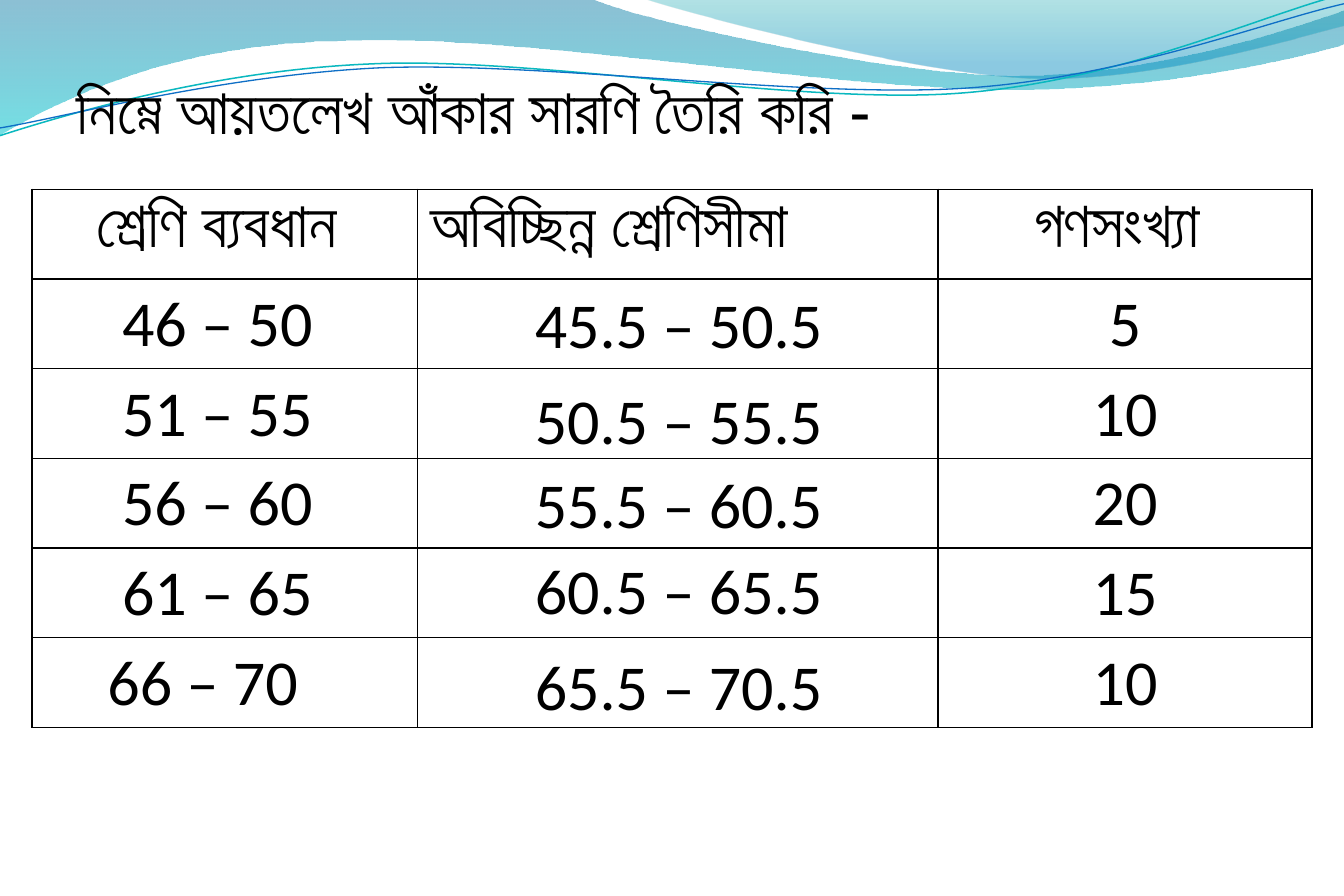
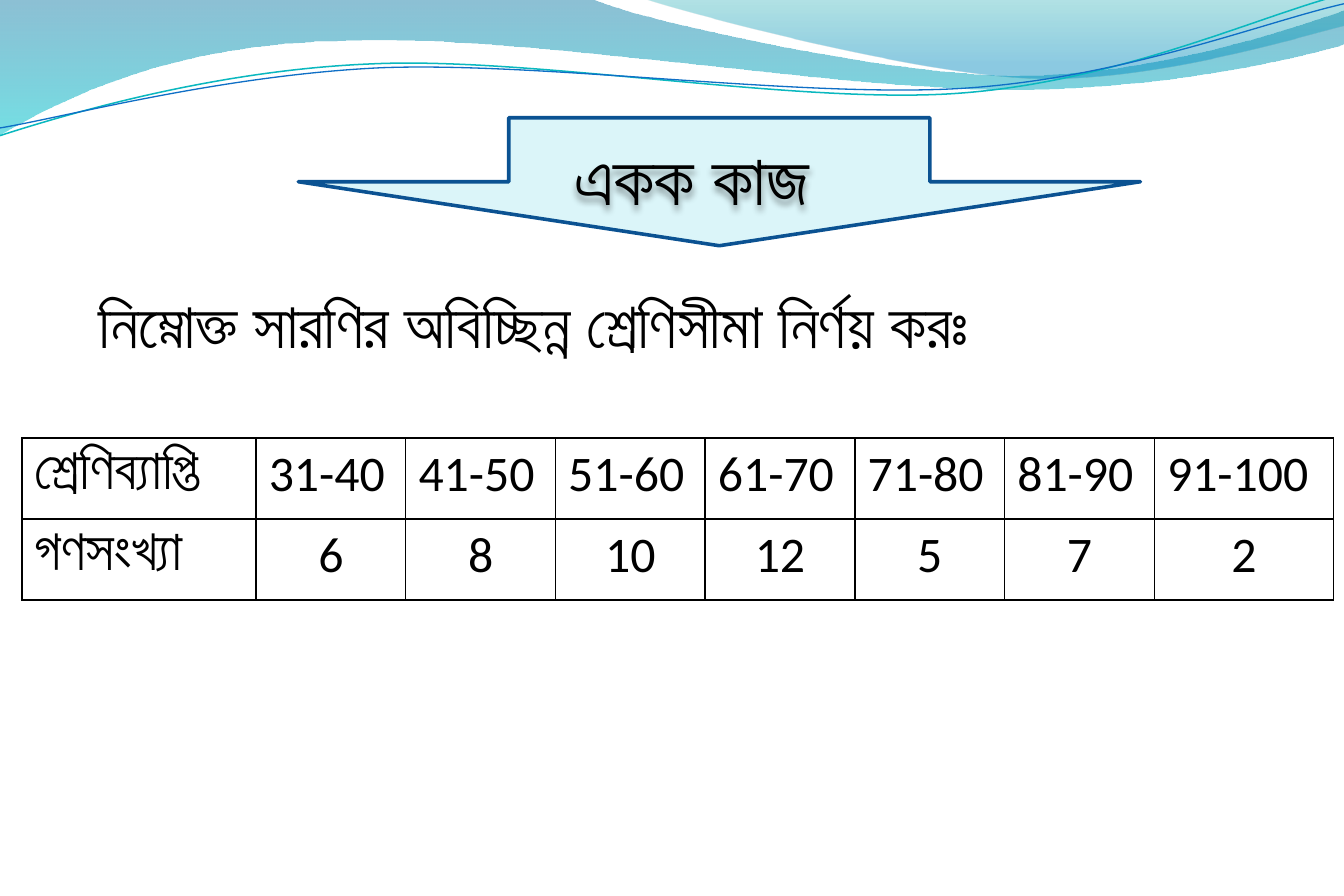
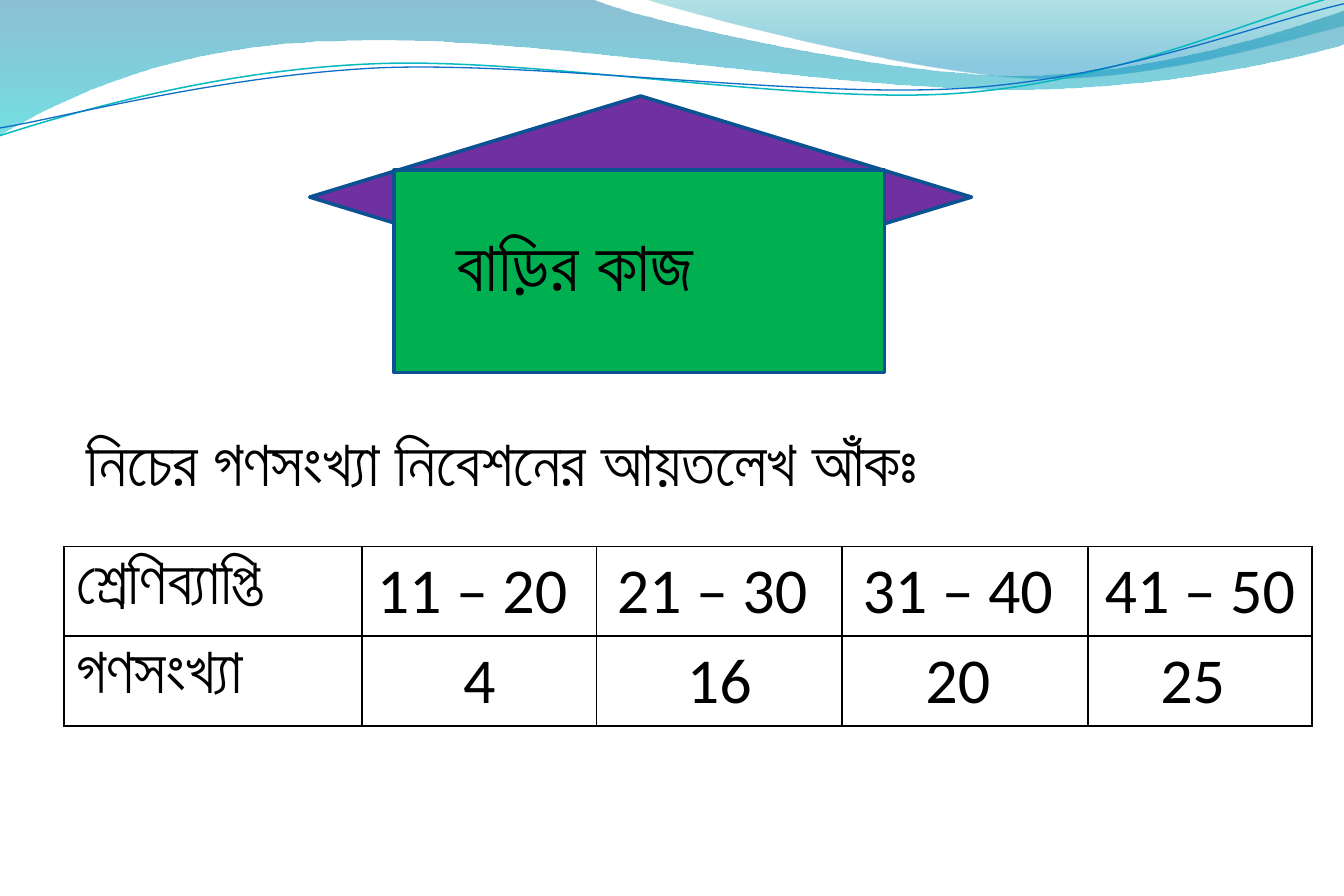
from dataclasses import dataclass
from typing import NamedTuple

from lxml import etree
from pptx import Presentation
from pptx.dml.color import RGBColor
from pptx.enum.shapes import MSO_SHAPE
from pptx.enum.text import MSO_AUTO_SIZE, PP_ALIGN
from pptx.oxml import parse_xml
from pptx.oxml.ns import nsdecls, qn
from pptx.util import Inches, Pt

CENTER, LEFT = PP_ALIGN.CENTER, PP_ALIGN.LEFT
FIT_TEXT = MSO_AUTO_SIZE.SHAPE_TO_FIT_TEXT
DOWN_ARROW, DIAMOND, RECTANGLE = MSO_SHAPE.DOWN_ARROW, MSO_SHAPE.DIAMOND, MSO_SHAPE.RECTANGLE
# Bengali base letters that join a following nukta into one code point
NUKTA = chr(0x09BC)
DOTTED_LETTERS = {0x09A1: 0x09DC, 0x09AF: 0x09DF}

Point = tuple[float, float]


@dataclass(frozen=True)
class Theme:
    label_font: str = "Arial"
    number_font: str = "Calibri"
    text: str = "000000"
    outline: str = "0B5292"
    arrow: str = "DBF5F9"
    roof: str = "7030A0"
    wall: str = "00B050"
    banner_size: int = 40
    body_size: int = 36
    label_size: int = 32
    small_size: int = 28


THEME = Theme()


class Stop(NamedTuple):
    position: float
    color: str
    opacity: int


class Wave(NamedTuple):
    """A path: a start, then pieces of one point (line) or three points (curve)."""
    start: Point
    pieces: list[tuple[Point, ...]]
    stops: tuple[Stop, ...] = ()
    line: str = ""
    weight: float = 0


@dataclass(frozen=True)
class Grid:
    left: float
    top: float
    widths: list[float]
    row_height: float
    rows: list[list[str]]
    left_cells: frozenset[tuple[int, int]]
    label_size: int = THEME.body_size
    number_size: int = THEME.body_size


WAVES = [
    Wave((0, 0), [
        ((4.62, -0.01),),
        ((4.99, 0.16), (6.97, 0.59), (7.96, 0.59)),
        ((8.96, 0.59), (10.06, 0.24), (10.5, 0.08)),
        ((10.51, 0.34),),
        ((10.32, 0.41), (9.13, 0.71), (7.83, 0.7)),
        ((6.53, 0.7), (4.01, 0.26), (2.7, 0.32)),
        ((1.36, 0.33), (0.48, 0.77), (-0.01, 1.06)),
        ((0, 0),),
    ], stops=(Stop(0, "0074A1", 45), Stop(1, "00C6CF", 55))),
    Wave((5.03, -0.01), [
        ((5.35, 0.1), (7.16, 0.58), (8.07, 0.61)),
        ((8.98, 0.64), (10.1, 0.3), (10.5, 0.2)),
        ((10.5, 0),),
        ((5.03, -0.01),),
    ], stops=(Stop(0, "00A1A9", 30), Stop(0.8, "008BBF", 45))),
    Wave((0, 1.06), [
        ((0.5, 0.9), (1.66, 0.55), (2.9, 0.5)),
        ((4.15, 0.44), (6.22, 0.82), (7.48, 0.73)),
        ((8.74, 0.64), (9.85, 0.12), (10.48, -0.04)),
    ], line="0AB8BF", weight=0.85),
    Wave((0, 1), [
        ((0.49, 0.92), (1.72, 0.59), (2.97, 0.53)),
        ((4.23, 0.48), (6.27, 0.77), (7.53, 0.69)),
        ((8.78, 0.61), (9.88, 0.17), (10.5, 0.03)),
    ], line="0F6FC6", weight=0.75),
]

FREQUENCY_GRID = Grid(
    0.25, 1.48, [3.01, 4.07, 2.92], 0.7,
    [["শ্রেণি ব্যবধান ", "অবিচ্ছিন্ন শ্রেণিসীমা", "গণসংখ্যা "],
     ["46 – 50 ", "", "5"],
     ["51 – 55 ", "", "10"],
     ["56 – 60 ", "", "20"],
     ["61 – 65 ", "", "15"],
     ["66 – 70 ", "", "10"]],
    frozenset({(0, 1)}))
CLASS_LIMITS = [(2.17, 2.58, "45.5 – 50.5"), (2.92, 2.58, "50.5 – 55.5"),
                (3.58, 2.67, "55.5 – 60.5"), (4.25, 2.75, "60.5 – 65.5"),
                (5, 2.83, "65.5 – 70.5")]

CLASSWORK_GRID = Grid(
    0.17, 3.42, [1.83] + [1.17] * 6 + [1.4], 0.63,
    [["শ্রেণিব্যাপ্তি", "31-40", "41-50", "51-60", "61-70", "71-80", "81-90", "91-100"],
     ["গণসংখ্যা", "6", "8", "10", "12", "5", "7", "2"]],
    frozenset({(0, col) for col in range(8)} | {(1, 0)}),
    THEME.label_size, THEME.small_size)

HOMEWORK_GRID = Grid(
    0.5, 4.27, [2.33, 1.83, 1.92, 1.92, 1.75], 0.7,
    [["শ্রেণিব্যাপ্তি", "11 – 20 ", "21 – 30 ", "31 – 40 ", "41 – 50 "],
     ["গণসংখ্যা", "4", "16", "20 ", "25 "]],
    frozenset({(0, 0), (1, 0)}))


def rgb(color: str) -> RGBColor:
    return RGBColor.from_string(color)


def join_nukta(text: str) -> str:
    for base, dotted in DOTTED_LETTERS.items():
        text = text.replace(chr(base) + NUKTA, chr(dotted))
    return text


def fill_gradient(sp, stops: tuple[Stop, ...]) -> None:
    """Fill from top to bottom with partly transparent colours."""
    sp.fill.gradient()
    sp.fill.gradient_angle = 270
    for target, stop in zip(sp.fill.gradient_stops, stops):
        target.position = stop.position
        target.color.rgb = rgb(stop.color)
    for node, stop in zip(sp.element.spPr.iter(qn("a:srgbClr")), stops):
        etree.SubElement(node, qn("a:alpha"), val=str(stop.opacity * 1000))


def bend_segments(sp, pieces: list[tuple[Point, ...]]) -> None:
    """Turn the straight segments that have control points into Bézier curves."""
    segments = list(sp.element.spPr.iter(qn("a:lnTo")))
    for segment, piece in zip(segments, pieces):
        if len(piece) == 1:
            continue
        segment.tag = qn("a:cubicBezTo")
        for index, (x, y) in enumerate(piece[:-1]):
            control = etree.Element(qn("a:pt"), x=str(Inches(x) - sp.left),
                                    y=str(Inches(y) - sp.top))
            segment.insert(index, control)


def add_wave(slide, wave: Wave):
    ends = [(Inches(x), Inches(y)) for x, y in (piece[-1] for piece in wave.pieces)]
    builder = slide.shapes.build_freeform(Inches(wave.start[0]), Inches(wave.start[1]))
    builder.add_line_segments(ends, close=bool(wave.stops))
    sp = builder.convert_to_shape()
    bend_segments(sp, wave.pieces)
    sp.shadow.inherit = False
    if wave.stops:
        fill_gradient(sp, wave.stops)
        sp.line.fill.background()
    else:
        sp.fill.background()
        sp.line.color.rgb = rgb(wave.line)
        sp.line.width = Pt(wave.weight)
    return sp


def move_waves_to_layout(slide) -> None:
    """Draw the waves, then hand them to the layout so that every slide shows them."""
    for wave in WAVES:
        slide.slide_layout.shapes.element.append(add_wave(slide, wave).element)


def add_run(p, text: str, size: int, font: str) -> None:
    r = p.add_run()
    r.text = join_nukta(text)
    r.font.size = Pt(size)
    r.font.name = font
    r.font.color.rgb = rgb(THEME.text)


def add_text(slide, left: float, top: float, width: float, text: str,
             size: int = THEME.body_size, font: str = THEME.label_font):
    height = 0.77 if size == THEME.banner_size else 0.71
    box = slide.shapes.add_textbox(Inches(left), Inches(top), Inches(width), Inches(height))
    tf = box.text_frame
    tf.word_wrap = True
    tf.auto_size = FIT_TEXT
    add_run(tf.paragraphs[0], text, size, font)
    return box


def add_soft_shadow(sp) -> None:
    sp.element.spPr.append(parse_xml(
        f'<a:effectLst {nsdecls("a")}><a:outerShdw blurRad="50800" dist="38100" dir="5400000">'
        '<a:srgbClr val="000000"><a:alpha val="40000"/></a:srgbClr>'
        '</a:outerShdw></a:effectLst>'))


def add_block(shapes, kind, left: float, top: float, width: float, height: float,
              fill: str) -> None:
    sp = shapes.add_shape(kind, Inches(left), Inches(top), Inches(width), Inches(height))
    sp.shadow.inherit = False
    sp.fill.solid()
    sp.fill.fore_color.rgb = rgb(fill)
    sp.line.color.rgb = rgb(THEME.outline)
    sp.line.width = Pt(2)


def add_borders(cell) -> None:
    tc_pr = cell._tc.get_or_add_tcPr()
    for index, side in enumerate(("lnL", "lnR", "lnT", "lnB")):
        tc_pr.insert(index, parse_xml(
            f'<a:{side} {nsdecls("a")} w="{Pt(1)}"><a:solidFill>'
            f'<a:srgbClr val="{THEME.text}"/></a:solidFill></a:{side}>'))


def add_grid(slide, grid: Grid):
    count = len(grid.rows)
    table = slide.shapes.add_table(
        count, len(grid.widths), Inches(grid.left), Inches(grid.top),
        Inches(sum(grid.widths)), Inches(grid.row_height * count)).table
    table.first_row = table.horz_banding = False
    for column, width in zip(table.columns, grid.widths):
        column.width = Inches(width)
    for row, texts in enumerate(grid.rows):
        table.rows[row].height = Inches(grid.row_height)
        for col, text in enumerate(texts):
            cell = table.cell(row, col)
            cell.fill.background()
            add_borders(cell)
            p = cell.text_frame.paragraphs[0]
            p.alignment = LEFT if (row, col) in grid.left_cells else CENTER
            if text and text[0].isdigit():
                add_run(p, text, grid.number_size, THEME.number_font)
            elif text:
                add_run(p, text, grid.label_size, THEME.label_font)
    return table


def fill_frequency_slide(slide) -> None:
    add_text(slide, 0.5, 0.5, 9.58, "নিম্নে আয়তলেখ আঁকার সারণি তৈরি করি -")
    table = add_grid(slide, FREQUENCY_GRID)
    table.cell(5, 0).margin_right = Inches(0.33)
    for top, width, limits in CLASS_LIMITS:
        add_text(slide, 4.08, top, width, limits, font=THEME.number_font)


def fill_classwork_slide(slide) -> None:
    add_block(slide.shapes, DOWN_ARROW, 2.33, 0.92, 6.58, 1, THEME.arrow)
    add_soft_shadow(add_text(slide, 4.25, 1, 3, " একক কাজ", THEME.banner_size))
    add_text(slide, 0.67, 2.17, 9.42, "নিম্নোক্ত সারণির অবিচ্ছিন্ন শ্রেণিসীমা নির্ণয় করঃ")
    add_grid(slide, CLASSWORK_GRID)


def fill_homework_slide(slide) -> None:
    house = slide.shapes.add_group_shape()
    add_block(house.shapes, DIAMOND, 2.42, 0.75, 5.17, 1.58, THEME.roof)
    add_block(house.shapes, RECTANGLE, 3.08, 1.33, 3.83, 1.58, THEME.wall)
    add_text(slide, 3.33, 1.67, 3.42, " বাড়ির কাজ", THEME.banner_size)
    add_text(slide, 0.58, 3.25, 9.58, "নিচের গণসংখ্যা নিবেশনের আয়তলেখ আঁকঃ")
    add_grid(slide, HOMEWORK_GRID)


def main() -> None:
    prs = Presentation()
    prs.slide_width, prs.slide_height = Inches(10.5), Inches(7)
    blank = prs.slide_layouts[6]
    fillers = (fill_frequency_slide, fill_classwork_slide, fill_homework_slide)
    slides = [prs.slides.add_slide(blank) for _ in fillers]
    move_waves_to_layout(slides[0])
    for slide, fill_slide in zip(slides, fillers):
        fill_slide(slide)
    prs.save("out.pptx")


if __name__ == "__main__":
    main()
